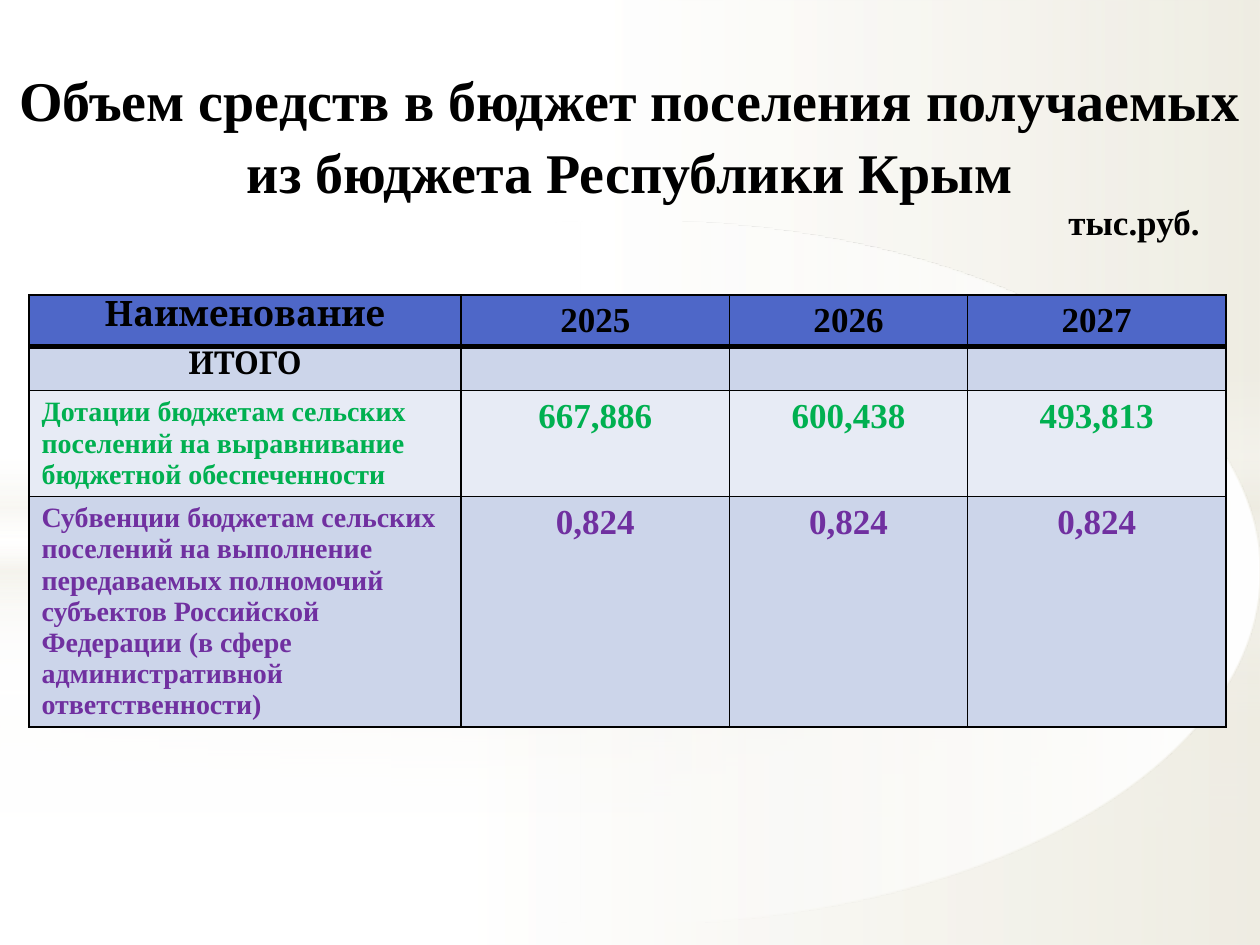
from dataclasses import dataclass

from lxml.etree import SubElement
from pptx import Presentation
from pptx.dml.color import RGBColor
from pptx.enum.shapes import MSO_SHAPE
from pptx.enum.text import MSO_ANCHOR, PP_ALIGN
from pptx.oxml.ns import qn
from pptx.util import Inches, Pt


@dataclass(frozen=True)
class Theme:
    body_font: str = "Times New Roman"
    label_font: str = "Cambria"
    title_size: int = 32
    value_size: int = 20
    total_size: int = 18
    item_size: int = 16
    black: str = "000000"
    white: str = "FFFFFF"
    cream: str = "EEECE1"
    header: str = "4E67C8"
    band_dark: str = "CCD5EA"
    band_light: str = "E7EBF5"
    green: str = "00B050"
    purple: str = "7030A0"
    thin: float = 0.96
    thick: float = 3


class BudgetSlide:
    def __init__(self, slide, theme):
        self.slide = slide
        self.theme = theme

    def add_color(self, parent, color, opacity=100):
        node = SubElement(parent, qn("a:srgbClr"), val=color)
        if opacity < 100:
            SubElement(node, qn("a:alpha"), val=str(opacity * 1000))

    def backdrop(self, preset, top, height, stops, angle):
        """Full-width shape with a gradient of (position, color, opacity) stops."""
        shape = self.slide.shapes.add_shape(
            preset, 0, Inches(top), Inches(10), Inches(height))
        shape.shadow.inherit = False
        shape.line.fill.background()
        shape.fill.gradient()
        gradient = shape.element.spPr.find(qn("a:gradFill"))
        for child in list(gradient):
            gradient.remove(child)
        stop_list = SubElement(gradient, qn("a:gsLst"))
        for position, color, opacity in stops:
            stop = SubElement(stop_list, qn("a:gs"), pos=str(position * 1000))
            self.add_color(stop, color, opacity)
        SubElement(gradient, qn("a:lin"), ang=str(angle * 60000), scaled="0")

    def set_text(self, frame, text, size, color, font, align):
        frame.text = text
        paragraph = frame.paragraphs[0]
        paragraph.alignment = align
        for run in paragraph.runs:
            run.font.name = font
            run.font.size = Pt(size)
            run.font.bold = True
            run.font.color.rgb = RGBColor.from_string(color)
        return paragraph

    def text(self, left, top, width, height, text, size, align):
        box = self.slide.shapes.add_textbox(
            Inches(left), Inches(top), Inches(width), Inches(height))
        frame = box.text_frame
        frame.word_wrap = True
        frame.vertical_anchor = MSO_ANCHOR.MIDDLE
        return self.set_text(frame, text, size, self.theme.black,
                             self.theme.body_font, align)

    def border(self, cell, side, width):
        line = SubElement(cell._tc.get_or_add_tcPr(), qn(f"a:ln{side}"),
                          w=str(Pt(width)))
        self.add_color(SubElement(line, qn("a:solidFill")), self.theme.black)

    def table(self, left, top, widths, heights, rows):
        """Each row is (texts, fill, color, label font, label size, label align)."""
        theme = self.theme
        table = self.slide.shapes.add_table(
            len(rows), len(widths), Inches(left), Inches(top),
            Inches(sum(widths)), Inches(sum(heights))).table
        table.first_row = table.horz_banding = False
        for column, width in zip(table.columns, widths):
            column.width = Inches(width)
        for r, (texts, fill, color, font, size, align) in enumerate(rows):
            table.rows[r].height = Inches(heights[r])
            thick_sides = {0: "B", 1: "T"}.get(r, "")
            for c, text in enumerate(texts):
                cell = table.cell(r, c)
                for side in "LRTB":
                    self.border(cell, side, theme.thick if side in thick_sides
                                else theme.thin)
                cell.fill.solid()
                cell.fill.fore_color.rgb = RGBColor.from_string(fill)
                is_label = c == 0
                if not text or (is_label and font == theme.label_font):
                    cell.margin_top, cell.margin_bottom = 0, Inches(0.04)
                if text:
                    self.set_text(cell.text_frame, text,
                                  size if is_label else theme.value_size, color,
                                  font if is_label else theme.body_font,
                                  align if is_label else PP_ALIGN.CENTER)


def main():
    presentation = Presentation()
    presentation.slide_width = Inches(10)
    presentation.slide_height = Inches(7.5)
    theme = Theme()
    page = BudgetSlide(
        presentation.slides.add_slide(presentation.slide_layouts[6]), theme)

    # Background: two layers of soft light, each with a glow and an ellipse
    white, cream = theme.white, theme.cream
    glow = [(0, white, 0), (29, white, 30), (45, cream, 40),
            (55, white, 26), (65, cream, 60), (100, white, 0)]
    # horizon, glow top, ellipse fade, extra opacity
    layers = [(5.58, 4.12, 56, 0), (4.23, 2.9, 54, 1)]
    for horizon, glow_top, fade, extra in layers:
        ground = [(0, white, 91 + extra), (37, white, 76 + extra),
                  (100, cream, 79 + extra)]
        sky = [(0, white, 89 + extra), (48, white, 62 + extra),
               (100, cream, 79 + extra)]
        page.backdrop(MSO_SHAPE.RECTANGLE, horizon, 7.5 - horizon, ground, 0)
        page.backdrop(MSO_SHAPE.RECTANGLE, 0, horizon, sky, 0)
        page.backdrop(MSO_SHAPE.RECTANGLE, glow_top, 2.5, glow, 90)
        page.backdrop(MSO_SHAPE.OVAL, 1.75, 5.58,
                      [(0, white, 100), (fade, white, 0)], 180)

    # Budget table
    center, left = PP_ALIGN.CENTER, PP_ALIGN.LEFT
    rows = [
        (["Наименование", "2025", "2026", "2027"], theme.header, theme.black,
         theme.label_font, theme.value_size, center),
        (["ИТОГО", "", "", ""], theme.band_dark, theme.black,
         theme.label_font, theme.total_size, center),
        (["Дотации бюджетам сельских поселений на выравнивание бюджетной "
          "обеспеченности", "667,886", "600,438", "493,813"],
         theme.band_light, theme.green, theme.body_font, theme.item_size, left),
        (["Субвенции бюджетам сельских поселений на выполнение передаваемых "
          "полномочий субъектов Российской Федерации (в сфере "
          "административной ответственности)", "0,824", "0,824", "0,824"],
         theme.band_dark, theme.purple, theme.body_font, theme.item_size, left),
    ]
    page.table(0.23, 2.34, [3.43, 2.13, 1.89, 2.05],
               [0.41, 0.35, 0.84, 1.83], rows)

    # Title and unit of measure
    title = page.text(0, 0.55, 10, 1, "Объем средств в бюджет поселения "
                      "получаемых из бюджета Республики Крым",
                      theme.title_size, center)
    title.line_spacing = 1.08
    page.text(8.2, 1.55, 1.42, 0.41, "тыс.руб.", theme.value_size,
              PP_ALIGN.RIGHT)

    presentation.save("out.pptx")


if __name__ == "__main__":
    main()
